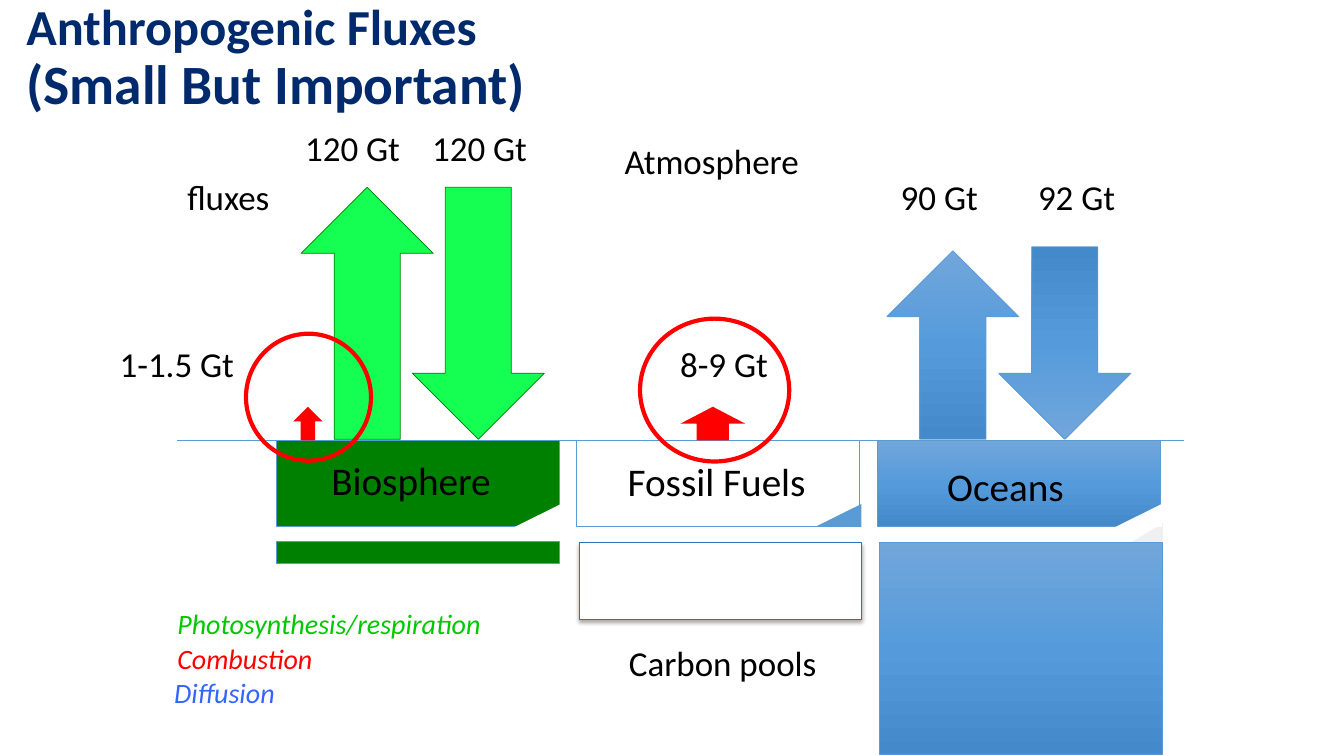
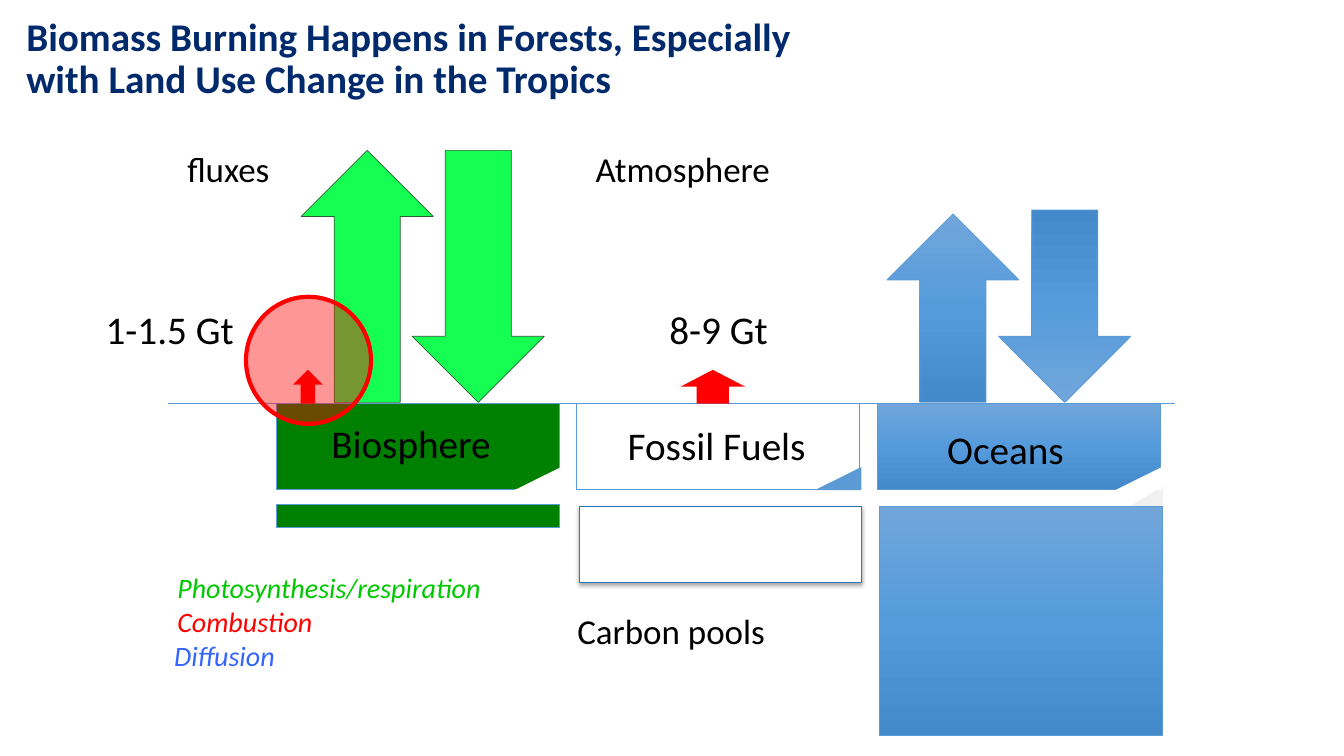
from copy import deepcopy
from dataclasses import dataclass

from lxml import etree
from pptx import Presentation
from pptx.dml.color import RGBColor
from pptx.enum.shapes import MSO_CONNECTOR, MSO_SHAPE as Shape
from pptx.enum.text import MSO_ANCHOR, MSO_AUTO_SIZE, PP_ALIGN
from pptx.oxml.ns import qn
from pptx.util import Cm, Pt


@dataclass(frozen=True)
class Theme:
    font: str = "Calibri"
    navy: str = "002A6C"
    black: str = "000000"
    white: str = "FFFFFF"
    pale_gray: str = "F1F0F0"
    blue: str = "5B9BD5"
    edge_blue: str = "2E75B6"
    forest: str = "008000"
    dark_green: str = "285F30"
    bright_green: str = "15FF52"
    red: str = "FF0000"
    legend_green: str = "00C800"
    legend_blue: str = "3366FF"
    ocean: tuple = ("71A6DB", "559BDB", "448ACA")
    label_size: float = 25
    pool_size: float = 28
    legend_size: float = 20


THEME = Theme()


class Sketch:
    """Holds the deck, the theme and the slide being drawn."""

    def __init__(self, theme):
        self.theme = theme
        self.deck = Presentation()
        self.deck.slide_width, self.deck.slide_height = Cm(33.87), Cm(19.05)
        self.page = None

    def new_page(self, title, sizes):
        """Start a slide; sizes gives one type size for each title line."""
        self.page = self.deck.slides.add_slide(self.deck.slide_layouts[5])
        holder = self.page.shapes.title
        holder.left, holder.top = Cm(0.41), Cm(0)
        holder.width, holder.height = Cm(32.99), Cm(3)
        frame = holder.text_frame
        frame.word_wrap = True
        frame.auto_size = MSO_AUTO_SIZE.NONE
        frame.vertical_anchor = MSO_ANCHOR.MIDDLE
        para = frame.paragraphs[0]
        para.text = title
        para.alignment = PP_ALIGN.LEFT
        para.line_spacing = 0.9
        for span, size in zip(para.runs, sizes):
            self.style(span, size, self.theme.navy, bold=True)
        for line_break in para._p.findall(qn("a:br")):
            line_break.append(deepcopy(para.runs[0]._r.find(qn("a:rPr"))))

    def style(self, span, size, color, bold=False, italic=False):
        font = span.font
        font.name, font.size = self.theme.font, Pt(size)
        font.bold, font.italic = bold, italic
        font.color.rgb = RGBColor.from_string(color)

    def text(self, words, x, y, width, size, color=THEME.black, italic=False):
        height = 0.25 + size * 0.043
        box = self.page.shapes.add_textbox(Cm(x), Cm(y), Cm(width), Cm(height))
        frame = box.text_frame
        frame.word_wrap = False
        frame.auto_size = MSO_AUTO_SIZE.SHAPE_TO_FIT_TEXT
        para = frame.paragraphs[0]
        para.text = words
        para.alignment = PP_ALIGN.LEFT
        self.style(para.runs[0], size, color, italic=italic)

    def shape(self, kind, x, y, width, height, fill=None, line=None, weight=0.5):
        """Fill may be a colour, a tuple of gradient colours, or None."""
        item = self.page.shapes.add_shape(kind, Cm(x), Cm(y), Cm(width), Cm(height))
        item.shadow.inherit = False
        if fill is None:
            item.fill.background()
        elif isinstance(fill, tuple):
            self.gradient(item, fill)
        else:
            item.fill.solid()
            item.fill.fore_color.rgb = RGBColor.from_string(fill)
        if line is None:
            item.line.fill.background()
        else:
            item.line.color.rgb = RGBColor.from_string(line)
            item.line.width = Pt(weight)
        return item

    def gradient(self, item, colors):
        """Fill from top to bottom with evenly spaced colours."""
        item.fill.gradient()
        item.fill.gradient_angle = 270
        stops = item._element.spPr.find(qn("a:gradFill")).find(qn("a:gsLst"))
        while len(stops) < len(colors):
            stops.append(deepcopy(stops[0]))
        for index, (stop, color) in enumerate(zip(item.fill.gradient_stops, colors)):
            stop.color.rgb = RGBColor.from_string(color)
            stop.position = index / (len(colors) - 1)

    def corner(self, x, y, width, height, fill):
        """Triangle with its right angle at the bottom right."""
        item = self.shape(Shape.RIGHT_TRIANGLE, x, y, width, height, fill)
        item._element.spPr.find(qn("a:xfrm")).set("flipH", "1")

    def arrow(self, x, base, width, height, fill, line=None, down=False):
        """Block arrow standing on the height given as base."""
        kind = Shape.DOWN_ARROW if down else Shape.UP_ARROW
        if down and isinstance(fill, tuple):
            fill = fill[::-1]
        self.shape(kind, x, base - height, width, height, fill, line)

    def ring(self, x, y, width, height, opacity=None):
        fill = self.theme.red if opacity else None
        item = self.shape(Shape.OVAL, x, y, width, height, fill, self.theme.red, 3)
        if opacity:
            color = item._element.spPr.find(qn("a:solidFill"))[0]
            etree.SubElement(color, qn("a:alpha"), val=str(opacity * 1000))

    def shadowed_box(self, x, y, width, height, fill, line):
        item = self.shape(Shape.RECTANGLE, x, y, width, height, fill, line)
        effects = item._element.spPr.find(qn("a:effectLst"))
        shadow = etree.SubElement(
            effects, qn("a:outerShdw"), blurRad=str(Pt(3.1)), dist=str(Pt(1.8)),
            dir="5400000", algn="ctr", rotWithShape="0")
        color = etree.SubElement(shadow, qn("a:srgbClr"), val=self.theme.black)
        etree.SubElement(color, qn("a:alpha"), val="35000")

    def rule(self, x, y, length):
        line = self.page.shapes.add_connector(
            MSO_CONNECTOR.STRAIGHT, Cm(x), Cm(y), Cm(x + length), Cm(y))
        line.line.color.rgb = RGBColor.from_string(self.theme.blue)
        line.line.width = Pt(1)
        etree.SubElement(line._element.spPr, qn("a:effectLst"))


def draw_pools(sketch, ground, ocean_depth):
    """Surface pools, the deeper pools below them, and their names."""
    theme = sketch.theme
    left, step, width = 6.96, 7.57, 7.14
    biosphere, fossil, ocean = (left + step * index for index in range(3))
    sketch.corner(28.09, ground + 2.08, 1.22, 0.74, theme.pale_gray)
    pools = (
        ("Biosphere", biosphere, theme.forest, theme.white, 8.1, 0.28, 4.6),
        ("Fossil Fuels", fossil, theme.white, theme.blue, 15.57, 0.31, 5.05),
        ("Oceans", ocean, theme.ocean, theme.white, 23.62, 0.42, 3.48),
    )
    for name, x, fill, fold, name_x, name_drop, name_width in pools:
        sketch.shape(Shape.RECTANGLE, x, ground, width, 2.16, fill, theme.blue)
        sketch.corner(x + 6.01, ground + 1.6, 1.17, 0.58, fold)
        sketch.text(name, name_x, ground + name_drop, name_width, theme.pool_size)
    deep = ground + 2.58
    sketch.shape(Shape.RECTANGLE, biosphere, deep - 0.03, width, 0.56,
                 theme.forest, theme.blue)
    sketch.shadowed_box(fossil + 0.07, deep, 7.11, 1.93, theme.white, theme.edge_blue)
    sketch.shape(Shape.RECTANGLE, ocean + 0.05, deep, width, ocean_depth,
                 theme.ocean, theme.blue)


def draw_fluxes(sketch, ground, green_edge, size):
    """Natural and human-made flux arrows; size is for the human-made labels."""
    theme = sketch.theme
    natural = (
        (7.59, 6.35, theme.bright_green, green_edge, False),
        (10.39, 6.35, theme.bright_green, green_edge, True),
        (22.35, 4.75, theme.ocean, theme.blue, False),
        (25.17, 4.85, theme.ocean, theme.blue, True),
    )
    for x, height, fill, line, down in natural:
        sketch.arrow(x, ground - 0.03, 3.33, height, fill, line, down)
    for x, width in ((7.39, 0.74), (17.15, 1.63)):
        sketch.arrow(x, ground, width, 0.85, theme.red)
    for words, right, em_width in (("1-1.5 Gt", 6.2, 0.117), ("8-9 Gt", 19.65, 0.09)):
        width = 0.51 + em_width * size
        sketch.text(words, right - width, ground - 2.6, width, size)


def draw_legend(sketch, ground):
    theme = sketch.theme
    entries = (
        ("Photosynthesis/respiration", 4.22, 4.07, 8.2, theme.legend_green),
        ("Combustion", 4.22, 4.95, 3.93, theme.red),
        ("Diffusion", 4.14, 5.79, 3.05, theme.legend_blue),
    )
    for words, x, drop, width, color in entries:
        sketch.text(words, x, ground + drop, width, theme.legend_size, color, True)


def draw_cycle(sketch, ground, line_left, ocean_depth, green_edge, flux_size, labels,
               ring_opacity=None):
    sketch.rule(line_left, ground, 25.36)
    draw_pools(sketch, ground, ocean_depth)
    draw_fluxes(sketch, ground, green_edge, flux_size)
    draw_legend(sketch, ground)
    for words, x, y, width in labels:
        sketch.text(words, x, y, width, sketch.theme.label_size)
    sketch.ring(6.2, ground - 2.69, 3.15, 3.2, ring_opacity)


def main():
    sketch = Sketch(THEME)

    sketch.new_page("Anthropogenic Fluxes\v(Small But Important)", (36, 39.6))
    draw_cycle(sketch, 11.1, 4.47, 5.33, THEME.forest, THEME.label_size, (
        ("Atmosphere", 15.49, 3.4, 4.98),
        ("Carbon pools", 15.6, 16.05, 5.28),
        ("fluxes", 4.47, 4.29, 2.64),
        ("120 Gt", 7.44, 3.05, 2.92),
        ("120 Gt", 10.64, 3.05, 2.92),
        ("90 Gt", 22.45, 4.29, 2.49),
        ("92 Gt", 25.91, 4.29, 2.49),
    ))
    sketch.ring(16.13, 8.03, 3.76, 3.6)

    sketch.new_page("Biomass Burning Happens in Forests, Especially\v"
                    "with Land Use Change in the Tropics", (28, 28))
    draw_cycle(sketch, 10.17, 4.24, 5.79, THEME.dark_green, THEME.pool_size, (
        ("Atmosphere", 14.76, 3.58, 4.98),
        ("Carbon pools", 14.3, 15.24, 5.28),
        ("fluxes", 4.47, 3.58, 2.64),
    ), ring_opacity=41)

    sketch.deck.save("out.pptx")


if __name__ == "__main__":
    main()
